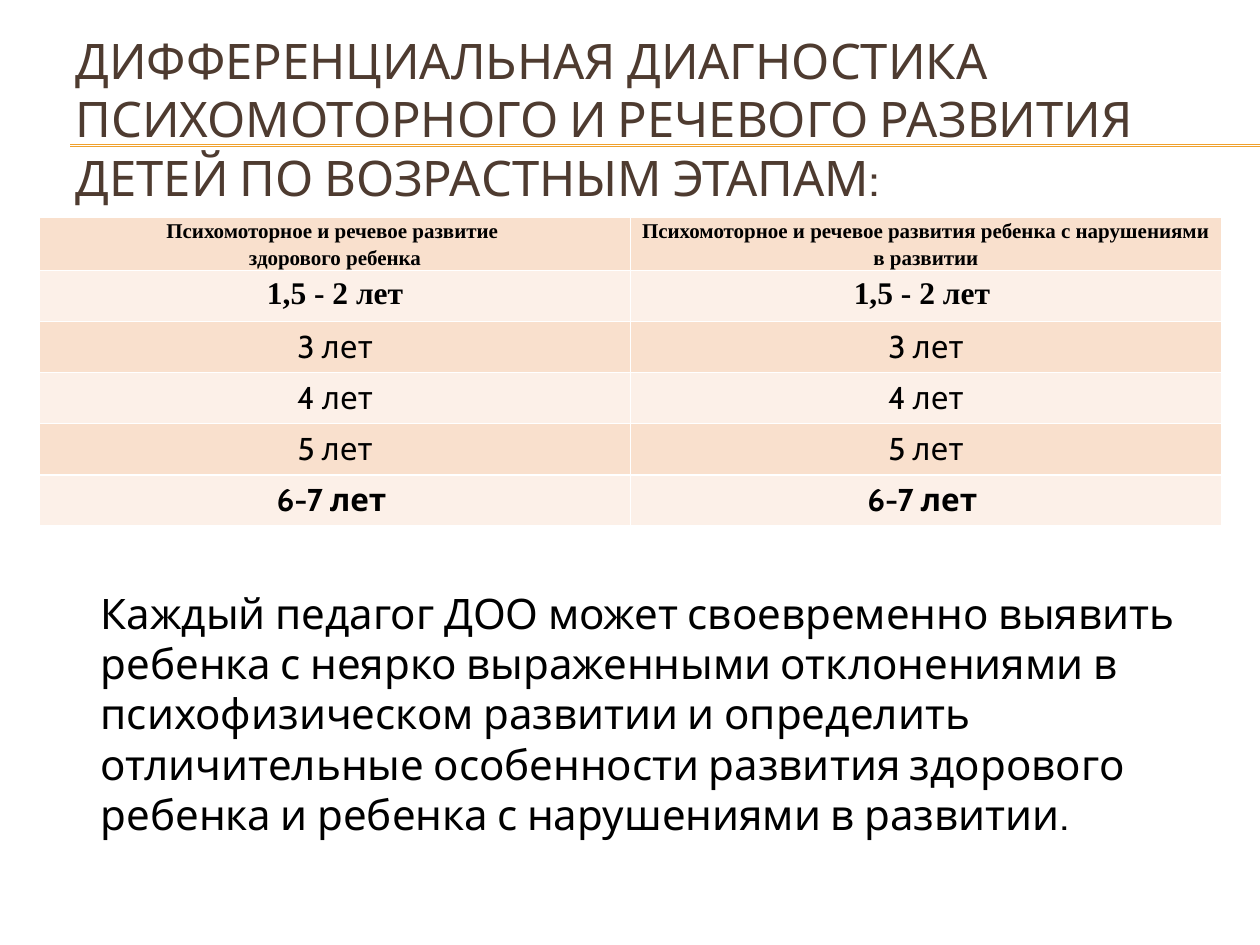
from dataclasses import dataclass

from lxml import etree
from pptx import Presentation
from pptx.dml.color import RGBColor
from pptx.enum.shapes import MSO_CONNECTOR
from pptx.enum.text import MSO_ANCHOR, MSO_AUTO_SIZE, PP_ALIGN
from pptx.oxml.ns import qn
from pptx.util import Cm, Pt

STRAIGHT = MSO_CONNECTOR.STRAIGHT
MIDDLE = MSO_ANCHOR.MIDDLE
NO_FIT, GROW = MSO_AUTO_SIZE.NONE, MSO_AUTO_SIZE.SHAPE_TO_FIT_TEXT
LEFT, CENTER = PP_ALIGN.LEFT, PP_ALIGN.CENTER
TITLE_ONLY = 5


@dataclass(frozen=True)
class Theme:
    sans: str = "Cabin"
    serif: str = "Times New Roman"
    title: str = "4E3B30"
    text: str = "000000"
    rule: str = "F0A22E"
    border: str = "FFFFFF"
    bands: tuple = ("F9E0CD", "FCF0E8")
    title_size: int = 28
    body_size: int = 24
    cell_size: int = 18
    header_size: int = 12


@dataclass(frozen=True)
class Row:
    cells: tuple
    font: str
    size: int
    bold: bool
    header: bool = False


T = Theme()

TITLE = ("ДИФФЕРЕНЦИАЛЬНАЯ ДИАГНОСТИКА ПСИХОМОТОРНОГО И РЕЧЕВОГО РАЗВИТИЯ "
         "ДЕТЕЙ ПО ВОЗРАСТНЫМ ЭТАПАМ:")
CONCLUSION = ("Каждый педагог ДОО может своевременно выявить ребенка с неярко "
              "выраженными отклонениями в психофизическом развитии и определить "
              "отличительные особенности развития здорового ребенка и ребенка "
              "с нарушениями в развитии.")
ROWS = (
    Row(("Психомоторное и речевое развитие \nздорового ребенка",
         "Психомоторное и речевое развития ребенка с нарушениями в развитии"),
        T.serif, T.header_size, True, header=True),
    Row(("1,5 - 2 лет", "1,5 - 2 лет "), T.serif, T.cell_size, True),
    *(Row((f"{age} лет",) * 2, T.sans, T.cell_size, False) for age in (3, 4, 5)),
    Row(("6-7 лет ",) * 2, T.sans, T.cell_size, True),
)


def write(tf, text: str, font: str, size: int, color: str,
          bold: bool = False, align=LEFT, spacing: float = 1.0) -> None:
    """Fill a text frame, one paragraph per line of text."""
    for i, line in enumerate(text.split("\n")):
        p = tf.add_paragraph() if i else tf.paragraphs[0]
        p.alignment, p.line_spacing = align, spacing
        r = p.add_run()
        r.text = line
        for name, value in {"name": font, "size": Pt(size), "bold": bold}.items():
            setattr(r.font, name, value)
        r.font.color.rgb = RGBColor.from_string(color)


def add_rule(s, y: float):
    """Draw a thin horizontal rule running to the right slide edge."""
    line = s.shapes.add_connector(STRAIGHT, Cm(1.42), Cm(y), Cm(25.4), Cm(y))
    line.line.color.rgb = RGBColor.from_string(T.rule)
    line.line.width = Pt(0.75)
    etree.SubElement(line.element.spPr, qn("a:effectLst"))
    return line


def set_borders(cell) -> None:
    """Give all four sides of a cell the same line."""
    tc_pr = cell._tc.get_or_add_tcPr()
    for i, side in enumerate(("lnL", "lnR", "lnT", "lnB")):
        ln = etree.Element(qn(f"a:{side}"), w=str(Pt(1)))
        fill = etree.SubElement(ln, qn("a:solidFill"))
        etree.SubElement(fill, qn("a:srgbClr"), val=T.border)
        tc_pr.insert(i, ln)


def add_age_table(s) -> None:
    row_height = Cm(1.03)
    table = s.shapes.add_table(len(ROWS), 2, Cm(0.8), Cm(4.37), Cm(23.82),
                               row_height * len(ROWS)).table
    for i, row in enumerate(ROWS):
        for j, text in enumerate(row.cells):
            cell = table.cell(i, j)
            cell.fill.solid()
            cell.fill.fore_color.rgb = RGBColor.from_string(T.bands[i % 2])
            set_borders(cell)
            if row.header:
                margins = {"margin_left": Cm(0.18), "margin_right": Cm(0.18),
                           "margin_top": 0, "margin_bottom": 0}
                for name, value in margins.items():
                    setattr(cell, name, value)
            write(cell.text_frame, text, row.font, row.size, T.text, row.bold,
                  CENTER, 1.15 if row.header else 1.0)


def main() -> None:
    prs = Presentation()
    prs.slide_width, prs.slide_height = Cm(25.4), Cm(19.05)
    s = prs.slides.add_slide(prs.slide_layouts[TITLE_ONLY])

    # Title over a double rule
    title = s.shapes.title
    box = {"left": Cm(1.27), "top": Cm(1.19), "width": Cm(24.13), "height": Cm(2.39)}
    for name, value in box.items():
        setattr(title, name, value)
    tf = title.text_frame
    for name, value in {"word_wrap": True, "auto_size": NO_FIT,
                        "vertical_anchor": MIDDLE}.items():
        setattr(tf, name, value)
    write(tf, TITLE, T.sans, T.title_size, T.title)
    for y in (2.92, 2.95):
        title.element.addprevious(add_rule(s, y).element)

    # Age stages
    add_age_table(s)

    # Conclusion
    tf = s.shapes.add_textbox(Cm(1.78), Cm(11.71), Cm(22.81), Cm(6.15)).text_frame
    tf.word_wrap, tf.auto_size = True, GROW
    write(tf, CONCLUSION, T.sans, T.body_size, T.text)

    prs.save("out.pptx")


if __name__ == "__main__":
    main()
